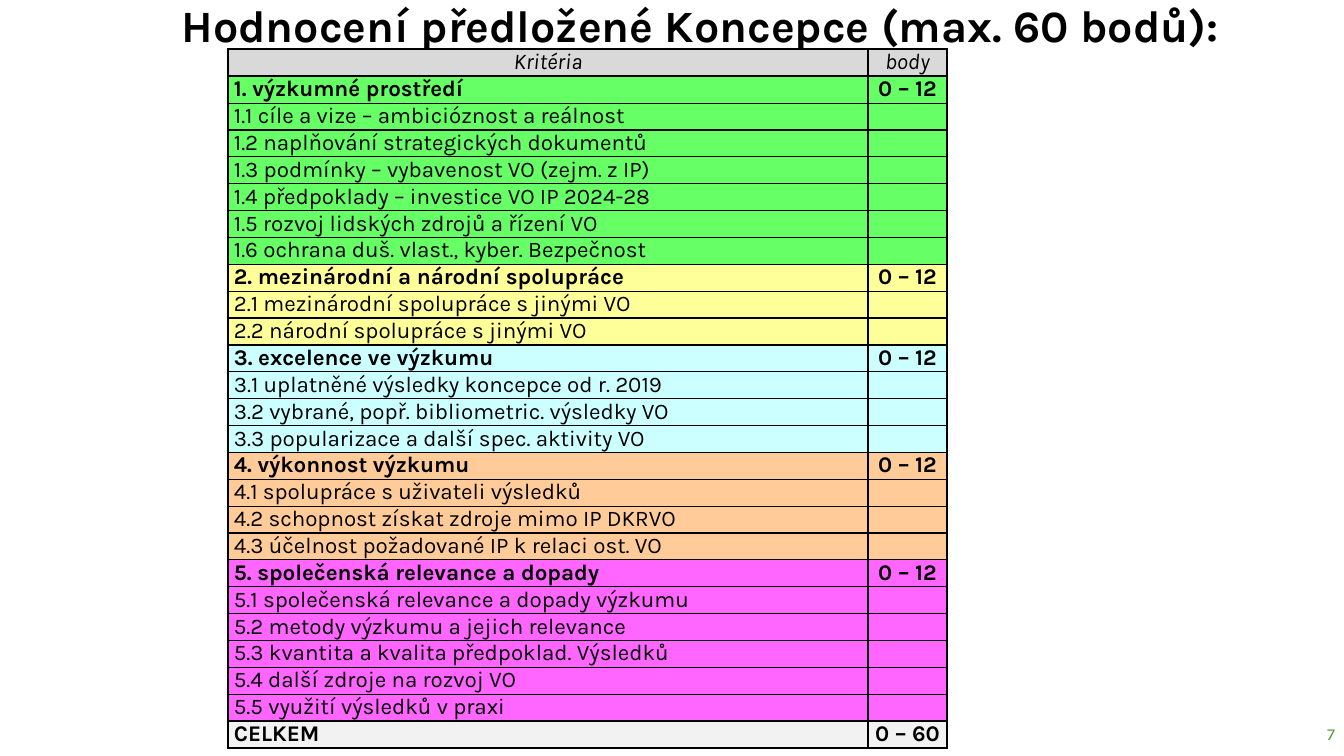
import pptx
import pptx.util
import pptx.dml.color
import pptx.enum.text
import pptx.oxml
import pptx.oxml.ns
import lxml.etree

Inches, Pt = pptx.util.Inches, pptx.util.Pt
PP_ALIGN = pptx.enum.text.PP_ALIGN
ANCHOR = pptx.enum.text.MSO_ANCHOR
qn = pptx.oxml.ns.qn
FONT = "Karla"


def write(p, text, color="000000", align=PP_ALIGN.LEFT, **formats):
    p.alignment = align
    r = p.add_run()
    r.text = text
    r.font.color.rgb = pptx.dml.color.RGBColor.from_string(color)
    for name, value in {"name": FONT, **formats}.items():
        setattr(r.font, name, value)


def add_border(cell, side, width):
    """Draw one black side (L, R, T or B) of a cell; call before filling it."""
    ln = lxml.etree.SubElement(cell._tc.get_or_add_tcPr(), qn(f"a:ln{side}"), w=str(Pt(width)))
    fill = lxml.etree.SubElement(ln, qn("a:solidFill"))
    lxml.etree.SubElement(fill, qn("a:srgbClr"), val="000000")


# Each group: fill, points, heading, criteria
GROUPS = [
    ("D9D9D9", "body", "Kritéria", []),
    ("66FF66", "0 – 12", "1. výzkumné prostředí", [
        "1.1 cíle a vize – ambicióznost a reálnost",
        "1.2 naplňování strategických dokumentů",
        "1.3 podmínky – vybavenost VO (zejm. z IP)",
        "1.4 předpoklady – investice VO IP 2024-28",
        "1.5 rozvoj lidských zdrojů a řízení VO",
        "1.6 ochrana duš. vlast., kyber. Bezpečnost"]),
    ("FFFF99", "0 – 12", "2. mezinárodní a národní spolupráce", [
        "2.1 mezinárodní spolupráce s jinými VO",
        "2.2 národní spolupráce s jinými VO"]),
    ("CCFFFF", "0 – 12", "3. excelence ve výzkumu", [
        "3.1 uplatněné výsledky koncepce od r. 2019",
        "3.2 vybrané, popř. bibliometric. výsledky VO",
        "3.3 popularizace a další spec. aktivity VO"]),
    ("FFCC99", "0 – 12", "4. výkonnost výzkumu", [
        "4.1 spolupráce s uživateli výsledků",
        "4.2 schopnost získat zdroje mimo IP DKRVO",
        "4.3 účelnost požadované IP k relaci ost. VO"]),
    ("FF66FF", "0 – 12", "5. společenská relevance a dopady", [
        "5.1 společenská relevance a dopady výzkumu",
        "5.2 metody výzkumu a jejich relevance",
        "5.3 kvantita a kvalita předpoklad. Výsledků",
        "5.4 další zdroje na rozvoj VO",
        "5.5 využití výsledků v praxi"]),
    ("F2F2F2", "0 – 60", "CELKEM", []),
]
rows = []
for fill, points, heading, criteria in GROUPS:
    rows.append((fill, heading, points))
    rows += [(fill, criterion, "") for criterion in criteria]

prs = pptx.Presentation()
prs.slide_width, prs.slide_height = Inches(13.33), Inches(7.5)
s = prs.slides.add_slide(prs.slide_layouts[5])

# Title
title = s.shapes.title
title.left, title.top, title.width, title.height = map(Inches, (1.7, -0.07, 11.55, 0.94))
tf = title.text_frame
tf.word_wrap = True
tf.auto_size = pptx.enum.text.MSO_AUTO_SIZE.NONE
tf.vertical_anchor = ANCHOR.TOP
write(tf.paragraphs[0], "Hodnocení předložené Koncepce (max. 60 bodů):", size=Pt(32), bold=True)

# Criteria table
column_widths = [6.35, 0.78]
table_height = 6.93
table = s.shapes.add_table(len(rows), 2, Inches(2.26), Inches(0.49),
                           Inches(sum(column_widths)), Inches(table_height)).table
table.first_row = table.horz_banding = False
for column, width in zip(table.columns, column_widths):
    column.width = Inches(width)

last = len(rows) - 1
for i, (fill, *texts) in enumerate(rows):
    table.rows[i].height = Inches(table_height / len(rows))
    for j, text in enumerate(texts):
        cell = table.cell(i, j)
        for name, value in {"margin_left": 0.06, "margin_right": 0.06,
                            "margin_top": 0, "margin_bottom": 0}.items():
            setattr(cell, name, Inches(value))
        thick = {"L": j == 0, "R": j == 1, "T": i in (0, 1), "B": i in (0, last)}
        for side, is_thick in thick.items():
            add_border(cell, side, 1.5 if is_thick else 1)
        cell.fill.solid()
        cell.fill.fore_color.rgb = pptx.dml.color.RGBColor.from_string(fill)
        p = cell.text_frame.paragraphs[0]
        if text:
            centered = i == 0 or j == 1
            write(p, text, align=PP_ALIGN.CENTER if centered else PP_ALIGN.LEFT,
                  size=Pt(16), italic=i == 0, bold=i > 0 and bool(texts[1]))
        else:
            # Keeps an empty cell from stretching its row
            lxml.etree.SubElement(p._p, qn("a:endParaRPr"), sz="1200")

# Page number
number = s.shapes.add_textbox(*map(Inches, (11.59, 7.06, 1.75, 0.44)))
tf = number.text_frame
tf.word_wrap = True
tf.vertical_anchor = ANCHOR.MIDDLE
write(tf.paragraphs[0], "7", color="549E39", align=PP_ALIGN.RIGHT, size=Pt(12))

prs.save("out.pptx")
